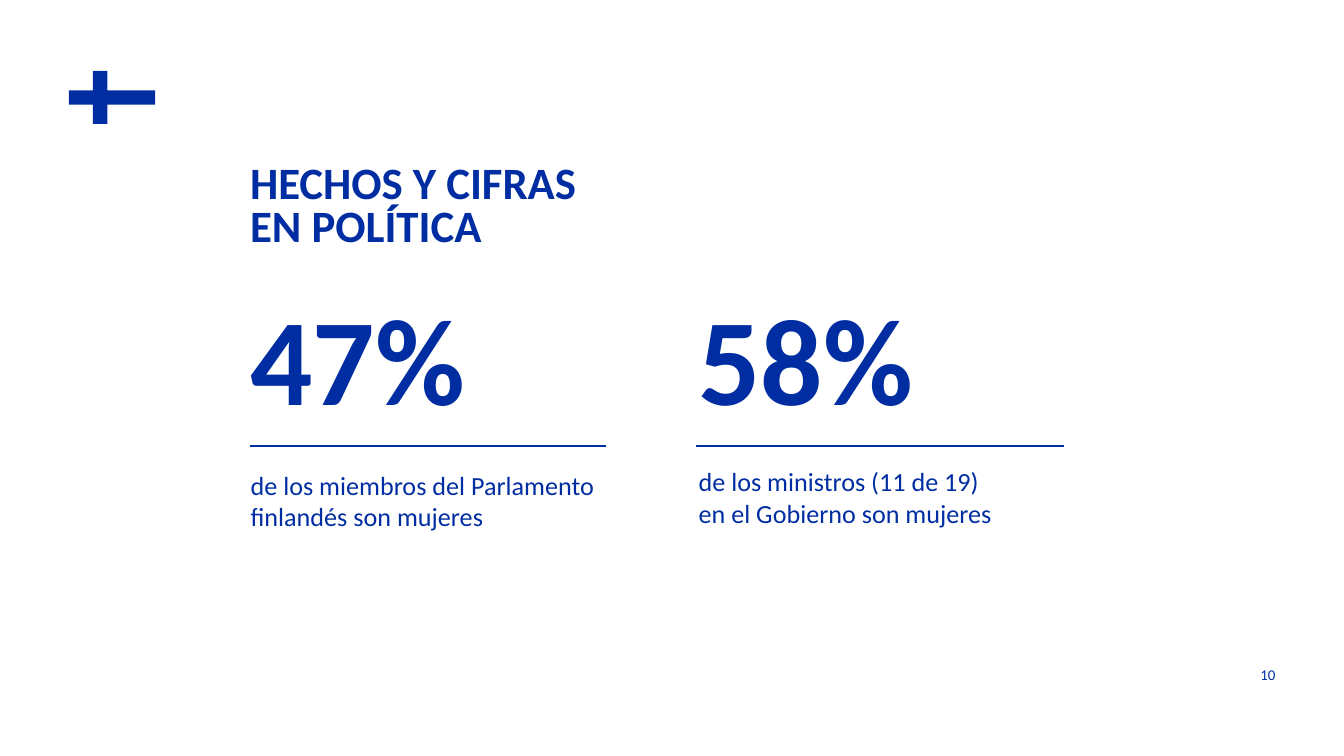
from lxml.etree import SubElement
from pptx import Presentation
from pptx.dml.color import RGBColor
from pptx.enum.shapes import MSO_CONNECTOR
from pptx.enum.text import MSO_ANCHOR, PP_ALIGN
from pptx.oxml.ns import qn
from pptx.util import Pt

COLORS = {"background": "FFFFFF", "blue": "002EA2"}


class SlideBuilder:
    font_name = "Calibri"
    color = RGBColor.from_string(COLORS["blue"])

    def __init__(self, slide):
        self.slide = slide
        fill = slide.background.fill
        fill.solid()
        fill.fore_color.rgb = RGBColor.from_string(COLORS["background"])

    def add_text(self, text, left, top, width, height, size, bold=False,
                 align=PP_ALIGN.LEFT, anchor=MSO_ANCHOR.TOP, spacing=None, inset=True):
        """Add a text box; a newline in the text becomes a line break."""
        shape = self.slide.shapes.add_textbox(Pt(left), Pt(top), Pt(width), Pt(height))
        frame = shape.text_frame
        frame.word_wrap = True
        frame.vertical_anchor = anchor
        if not inset:
            frame.margin_left = frame.margin_right = 0
            frame.margin_top = frame.margin_bottom = 0
        paragraph = frame.paragraphs[0]
        paragraph.text = text
        paragraph.alignment = align
        paragraph.line_spacing = spacing
        for run in paragraph.runs:
            run.font.name = self.font_name
            run.font.size = Pt(size)
            run.font.bold = bold
            run.font.color.rgb = self.color

    def add_rule(self, left, right, y):
        connector = self.slide.shapes.add_connector(
            MSO_CONNECTOR.STRAIGHT, Pt(left), Pt(y), Pt(right), Pt(y))
        connector.line.color.rgb = self.color
        connector.line.width = Pt(1)
        SubElement(connector._element.spPr, qn("a:effectLst"))

    def add_cross(self, xs, ys):
        """Draw a cross from its four x and four y edges, outermost first and last."""
        x0, x1, x2, x3 = map(Pt, xs)
        y0, y1, y2, y3 = map(Pt, ys)
        builder = self.slide.shapes.build_freeform(x1, y0)
        builder.add_line_segments([
            (x1, y1), (x0, y1), (x0, y2), (x1, y2), (x1, y3), (x2, y3),
            (x2, y2), (x3, y2), (x3, y1), (x2, y1), (x2, y0)])
        shape = builder.convert_to_shape()
        shape.shadow.inherit = False
        shape.fill.solid()
        shape.fill.fore_color.rgb = self.color
        shape.line.fill.background()

    def add_figure(self, value, caption, left, caption_top, width, rule):
        self.add_text(value, left, 147.6, 174, 87, size=66, bold=True)
        self.add_rule(*rule, y=239)
        self.add_text(caption, left, caption_top, width, 41, size=14)


def main():
    presentation = Presentation()
    presentation.slide_width = Pt(720)
    presentation.slide_height = Pt(405)
    builder = SlideBuilder(presentation.slides.add_slide(presentation.slide_layouts[6]))

    builder.add_cross(xs=(37, 49.8, 57.6, 83.2), ys=(38, 48.4, 56, 66.4))
    builder.add_text("HECHOS Y CIFRAS\nEN POLÍTICA", 134, 83.5, 283.7, 51, size=24,
                     bold=True, anchor=MSO_ANCHOR.BOTTOM, spacing=0.8, inset=False)
    builder.add_figure("47%", "de los miembros del Parlamento finlandés son mujeres",
                       left=127.2, caption_top=247.7, width=209, rule=(134, 324.7))
    builder.add_figure("58%", "de los ministros (11 de 19)\nen el Gobierno son mujeres",
                       left=367.2, caption_top=246, width=202.3, rule=(373, 570))
    builder.add_text("10", 626.4, 355.7, 56.9, 11.5, size=8, align=PP_ALIGN.RIGHT,
                     anchor=MSO_ANCHOR.MIDDLE, inset=False)
    presentation.save("out.pptx")


if __name__ == "__main__":
    main()
